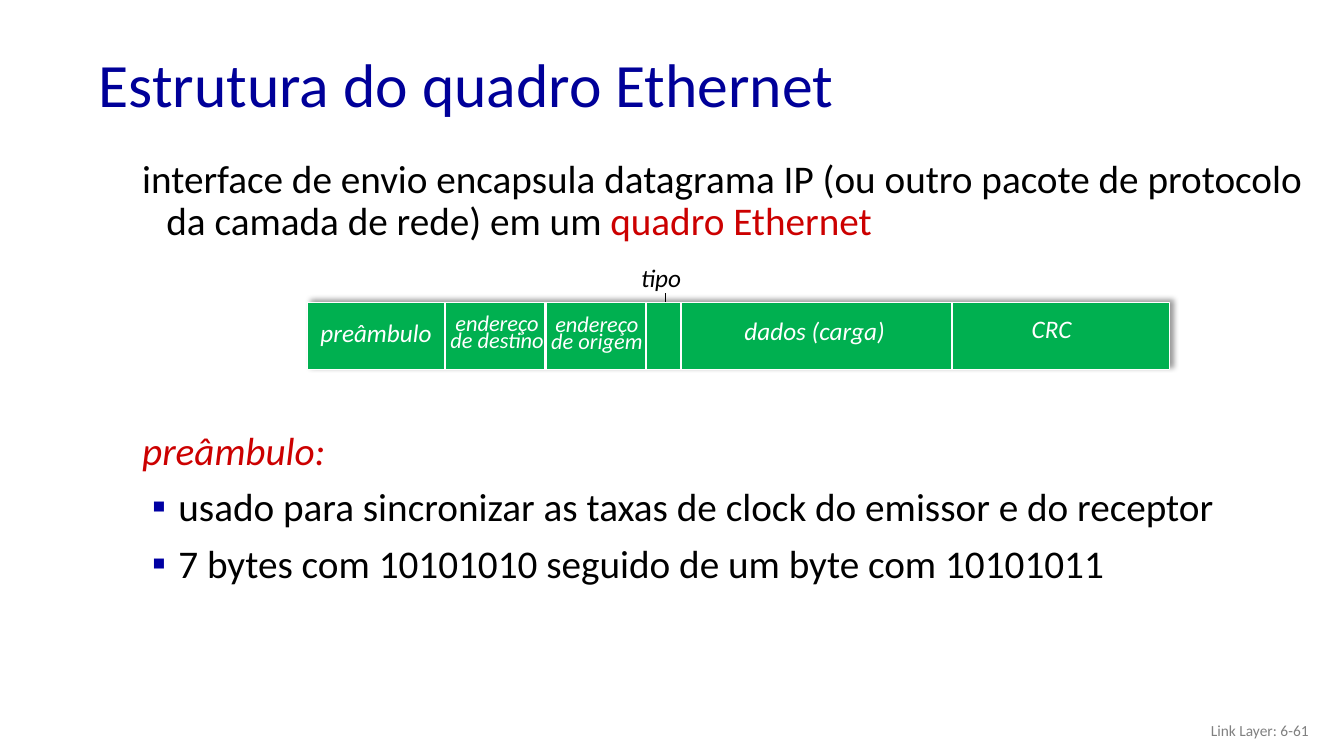
from lxml import etree
from pptx import Presentation, util as u
from pptx.dml.color import RGBColor
from pptx.enum import shapes, text
from pptx.oxml import ns

NAVY = RGBColor(0x00, 0x00, 0x99)
BULLET_BLUE = RGBColor(0x00, 0x00, 0xA3)
RED = RGBColor(0xCC, 0x00, 0x00)
GREEN = RGBColor(0x00, 0xB0, 0x50)
GRAY = RGBColor(0x80, 0x80, 0x80)
BLACK = RGBColor(0x00, 0x00, 0x00)
WHITE = RGBColor(0xFF, 0xFF, 0xFF)
FONT = "Calibri"
ALIGN = text.PP_ALIGN


def add_xml(parent, tag, **attributes):
    return etree.SubElement(parent, ns.qn(tag), attributes)


def place(shape, box):
    shape.left, shape.top, shape.width, shape.height = map(u.Inches, box)


def add_run(paragraph, words, size, color, italic=False):
    run = paragraph.add_run()
    run.text = words
    run.font.name = FONT
    run.font.size = u.Pt(size)
    run.font.italic = italic
    run.font.color.rgb = color


def add_title(title, box, words):
    place(title, box)
    frame = title.text_frame
    frame.auto_size = text.MSO_AUTO_SIZE.NONE
    frame.vertical_anchor = text.MSO_ANCHOR.MIDDLE
    heading = frame.paragraphs[0]
    heading.alignment = ALIGN.LEFT
    heading.line_spacing = 0.9
    add_run(heading, words, 44, NAVY)


def set_bullet(paragraph, bulleted):
    margin, hanging = (0.51, -0.26) if bulleted else (0.39, -0.24)
    properties = paragraph._p.get_or_add_pPr()
    properties.set("marL", str(u.Inches(margin)))
    properties.set("indent", str(u.Inches(hanging)))
    if bulleted:
        add_xml(add_xml(properties, "a:buClr"), "a:srgbClr", val=str(BULLET_BLUE))
        add_xml(properties, "a:buFont", typeface=FONT)
        add_xml(properties, "a:buChar", char="▪")
    else:
        add_xml(properties, "a:buNone")


def fill_body(body, box, items):
    """Each item is (bulleted, runs), a run being (words, color, italic)."""
    place(body, box)
    frame = body.text_frame
    frame.auto_size = text.MSO_AUTO_SIZE.NONE
    for index, (bulleted, runs) in enumerate(items):
        paragraph = frame.add_paragraph() if index else frame.paragraphs[0]
        set_bullet(paragraph, bulleted)
        paragraph.line_spacing = 0.9
        paragraph.space_before = u.Pt(10 if index else 0)
        for words, color, italic in runs:
            add_run(paragraph, words, 28, color, italic)


def add_label(parent, box, lines, size, color, italic=True,
              align=ALIGN.CENTER, spacing=None, anchor=text.MSO_ANCHOR.TOP):
    frame = parent.add_textbox(*map(u.Inches, box)).text_frame
    frame.word_wrap = True
    frame.vertical_anchor = anchor
    for index, line in enumerate(lines):
        paragraph = frame.add_paragraph() if index else frame.paragraphs[0]
        paragraph.alignment = align
        if spacing:
            paragraph.line_spacing = u.Pt(spacing)
        add_run(paragraph, line, size, color, italic)


def add_vertical(parent, x, top, bottom, color, weight):
    line = parent.add_connector(shapes.MSO_CONNECTOR.STRAIGHT, u.Inches(x),
                                u.Inches(top), u.Inches(x), u.Inches(bottom))
    line.line.color.rgb = color
    line.line.width = u.Pt(weight)
    add_xml(line._element.spPr, "a:effectLst")


def add_soft_shadow(shape):
    effects = add_xml(shape._element.spPr, "a:effectLst")
    shadow = add_xml(effects, "a:outerShdw", blurRad=str(u.Pt(4)),
                     dist=str(u.Pt(3)), dir=str(315 * 60000),
                     algn="bl", rotWithShape="0")
    add_xml(add_xml(shadow, "a:srgbClr", val=str(BLACK)), "a:alpha", val="40000")


def add_ethernet_frame(slide, box):
    left, top, width, height = box
    diagram = slide.shapes.add_group_shape().shapes

    add_vertical(diagram, left + 3.55, top - 0.09, top + 0.16, BLACK, 0.75)
    frame = diagram.add_shape(shapes.MSO_SHAPE.RECTANGLE, *map(u.Inches, box))
    frame.fill.solid()
    frame.fill.fore_color.rgb = GREEN
    frame.line.color.rgb = WHITE
    frame.line.width = u.Pt(0.75)
    add_soft_shadow(frame)

    for divider in (1.36, 2.36, 3.36, 3.7, 6.39):
        add_vertical(diagram, left + divider, top, top + height, WHITE, 1.5)

    # Field lines, then centre, top offset, width and text size
    fields = [
        (["endereço", "de destino"], 1.88, 0.12, 1.16, 16),
        (["endereço", "de origem"], 2.87, 0.13, 1.16, 16),
        (["dados (carga)"], 5.03, 0.21, 1.88, 18),
        (["CRC"], 7.38, 0.19, 1.17, 18),
        (["preâmbulo"], 0.68, 0.23, 1.46, 18),
    ]
    for lines, center, offset, field_width, size in fields:
        label_box = (left + center - field_width / 2, top + offset,
                     field_width, 0.12 + 0.17 * len(lines))
        add_label(diagram, label_box, lines, size, WHITE, spacing=12)
    add_label(diagram, (left + 3.21, top - 0.45, 1.05, 0.4), ["tipo"], 18, BLACK,
              align=ALIGN.LEFT)


def build_frame_slide(deck):
    slide = deck.slides.add_slide(deck.slide_layouts.get_by_name("Two Content"))
    title, encapsulation, preamble = slide.placeholders
    add_title(title, (0.88, 0.38, 11.5, 0.98), "Estrutura do quadro Ethernet")
    add_label(slide.shapes, (10.08, 7.05, 3, 0.4), ["Link Layer: 6-61"], 11, GRAY,
              italic=False, align=ALIGN.RIGHT, anchor=text.MSO_ANCHOR.MIDDLE)
    fill_body(encapsulation, (1.16, 1.53, 12.17, 2.44), [
        (False, [("interface de envio encapsula datagrama IP (ou outro pacote "
                  "de protocolo da camada de rede) em um ", BLACK, False),
                 ("quadro Ethernet", RED, False)]),
    ])
    add_ethernet_frame(slide, (3.05, 3, 8.55, 0.67))
    fill_body(preamble, (1.16, 4.23, 12.17, 2.75), [
        (False, [("preâmbulo:", RED, True)]),
        (True, [("usado para sincronizar as taxas de clock do emissor e do "
                 "receptor", BLACK, False)]),
        (True, [("7 bytes com 10101010 seguido de um byte com 10101011",
                 BLACK, False)]),
    ])


def main():
    deck = Presentation()
    deck.slide_width = u.Inches(13.33)
    deck.slide_height = u.Inches(7.5)
    build_frame_slide(deck)
    deck.save("out.pptx")


if __name__ == "__main__":
    main()
